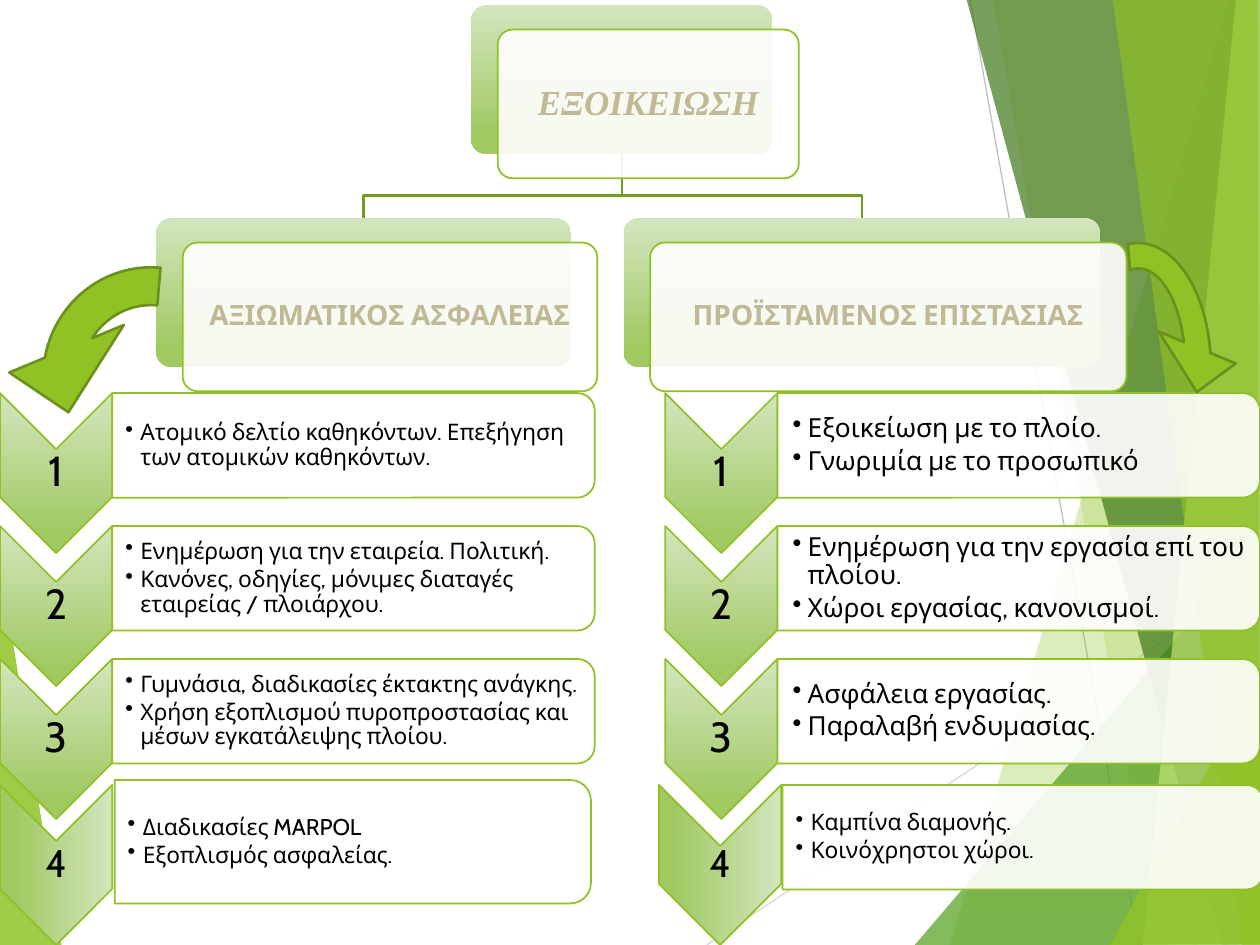
from dataclasses import dataclass

from lxml import etree
from pptx import Presentation
from pptx.dml.color import RGBColor
from pptx.enum.shapes import MSO_CONNECTOR, MSO_SHAPE
from pptx.enum.text import MSO_ANCHOR, MSO_AUTO_SIZE, PP_ALIGN
from pptx.oxml.ns import qn
from pptx.util import Inches, Pt

ROUNDED = MSO_SHAPE.ROUNDED_RECTANGLE
CHEVRON = MSO_SHAPE.CHEVRON
PANEL = MSO_SHAPE.ROUND_2_SAME_RECTANGLE
CURVED_ARROW = MSO_SHAPE.CIRCULAR_ARROW
STRAIGHT = MSO_CONNECTOR.STRAIGHT
MIDDLE = MSO_ANCHOR.MIDDLE
NO_AUTOFIT = MSO_AUTO_SIZE.NONE
CENTER, LEFT = PP_ALIGN.CENTER, PP_ALIGN.LEFT

COLORS = {
    "white": "FFFFFF", "black": "000000", "heading": "C1B995",
    "lime": "90C226", "leaf": "54A021", "forest": "3F7819", "pale": "C0E474",
    "grad_light": "D3E5BE", "grad_dark": "A0C962",
    "branch": "739B1E", "arrow_edge": "6B901C",
    "gray_light": "D9D9D9", "gray": "BFBFBF",
}
BODY_FONT = "Cabin"
TITLE_FONT = "Times New Roman"
ROW_TOP, ROW_PITCH = 3.12, 1.055
CHEVRON_W, CHEVRON_H = 0.89, 1.27
PANEL_W, PANEL_H = 3.83, 0.83
ARROW_ADJUSTMENTS = (0.125, 24.949, 204.577, 159.075, 0.205)


@dataclass(frozen=True)
class Box:
    left: float
    top: float
    width: float
    height: float

    def emu(self):
        return [Inches(v) for v in (self.left, self.top, self.width, self.height)]

    def inset(self, dx, dy):
        return Box(self.left + dx, self.top + dy, self.width - 2 * dx, self.height - 2 * dy)


@dataclass(frozen=True)
class Facet:
    points: tuple
    color: str
    opacity: int


@dataclass(frozen=True)
class Step:
    number: int
    chevron: Box
    panel: Box
    lines: tuple
    size: int
    number_size: int = 24
    gradient_angle: int = 0


FACETS_BEHIND = (Facet(((-0.01, 4.39), (0.49, 7.51), (-0.01, 7.5)), "lime", 85),)
FACETS_RIGHT = (
    Facet(((9.75, 0), (7.54, 7.5), (10.02, 7.51), (10.01, 0.01)), "lime", 30),
    Facet(((7.88, -0.01), (9.19, 7.5), (10.01, 7.5), (10.01, -0.01)), "lime", 20),
    Facet(((7.26, 7.5), (10, 4.29), (10.01, 7.5)), "leaf", 72),
    Facet(((7.67, -0.01), (9.7, 7.5), (10.01, 7.49), (10.01, -0.01)), "forest", 70),
    Facet(((9.81, -0.01), (9.07, 7.5), (10.01, 7.5), (10, -0.01)), "pale", 70),
    Facet(((8.83, -0.01), (9.86, 7.5), (10, 7.5), (9.98, -0.01)), "lime", 65),
    Facet(((8.81, 7.5), (10.01, 5.35), (10.01, 7.49)), "lime", 80),
)
THIN_LINES = (((5.61, 7.5), (10.01, 4.57), "gray_light"), ((7.7, 0), (9.04, 7.5), "gray"))

ROOT_CARD = Box(3.74, 0.04, 2.39, 1.18)
BRANCHES = (
    (Box(1.24, 1.73, 3.29, 1.18), "ΑΞΙΩΜΑΤΙΚΟΣ ΑΣΦΑΛΕΙΑΣ"),
    (Box(4.95, 1.73, 3.78, 1.18), "ΠΡΟΪΣΤΑΜΕΝΟΣ ΕΠΙΣΤΑΣΙΑΣ"),
)

OFFICER_DUTIES = (
    ("Ατομικό δελτίο καθηκόντων. Επεξήγηση των ατομικών καθηκόντων.",),
    ("Ενημέρωση για την εταιρεία. Πολιτική.",
     "Κανόνες, οδηγίες, μόνιμες διαταγές εταιρείας / πλοιάρχου."),
    ("Γυμνάσια, διαδικασίες έκτακτης ανάγκης.",
     "Χρήση εξοπλισμού πυροπροστασίας και μέσων εγκατάλειψης πλοίου."),
)
SUPERVISOR_DUTIES = (
    ("Εξοικείωση με το πλοίο.", "Γνωριμία με το προσωπικό"),
    ("Ενημέρωση για την εργασία επί του πλοίου.", "Χώροι εργασίας, κανονισμοί."),
    ("Ασφάλεια εργασίας.", "Παραλαβή ενδυμασίας."),
)
LAST_STEPS = (
    Step(4, Box(0, 6.23, CHEVRON_W, CHEVRON_H), Box(0.91, 6.19, 3.78, 0.98),
         ("Διαδικασίες MARPOL", "Εξοπλισμός ασφαλείας."), 13, 22, 270),
    Step(4, Box(5.23, 6.23, 0.97, CHEVRON_H), Box(6.21, 6.23, 3.82, PANEL_H),
         ("Καμπίνα διαμονής.", "Κοινόχρηστοι χώροι."), 13, 22, 270),
)


def rgb(name: str) -> RGBColor:
    return RGBColor.from_string(COLORS[name])


def fill_solid(shape, color: str, opacity: int = 100) -> None:
    shape.shadow.inherit = False
    shape.fill.solid()
    shape.fill.fore_color.rgb = rgb(color)
    if opacity < 100:
        tint = shape._element.spPr.find(qn("a:solidFill")).find(qn("a:srgbClr"))
        etree.SubElement(tint, qn("a:alpha"), val=str(opacity * 1000))


def fill_gradient(shape, angle: int) -> None:
    """Light-to-dark green; the angle runs counter-clockwise."""
    shape.shadow.inherit = False
    shape.fill.gradient()
    shape.fill.gradient_angle = angle
    stops = zip(shape.fill.gradient_stops, ("grad_light", "grad_dark"), (0, 0.88))
    for stop, color, position in stops:
        stop.color.rgb = rgb(color)
        stop.position = position


def outline(shape, color: str = "lime", width: float = 1) -> None:
    shape.line.color.rgb = rgb(color)
    shape.line.width = Pt(width)


def polygon(shapes, points: tuple, close: bool = True):
    start, *rest = [(Inches(x), Inches(y)) for x, y in points]
    builder = shapes.build_freeform(*start)
    builder.add_line_segments(rest, close=close)
    return builder.convert_to_shape()


def draw_facets(shapes, facets: tuple) -> None:
    for facet in facets:
        shape = polygon(shapes, facet.points)
        fill_solid(shape, facet.color, facet.opacity)
        shape.line.fill.background()


def draw_thin_line(shapes, start: tuple, end: tuple, color: str) -> None:
    line = shapes.add_connector(STRAIGHT, *(Inches(v) for v in start + end))
    outline(line, color, 0.75)
    etree.SubElement(line._element.spPr, qn("a:effectLst"))


def write(shape, lines: tuple, size: int, color: str = "black", margin: float = 0.02,
          font: str = BODY_FONT, bold: bool = False, italic: bool = False,
          bulleted: bool = False) -> None:
    frame = shape.text_frame
    frame.text = "\n".join(lines)
    frame.word_wrap = True
    frame.auto_size = NO_AUTOFIT
    frame.vertical_anchor = MIDDLE
    frame.margin_top = frame.margin_right = frame.margin_bottom = Inches(margin)
    frame.margin_left = Inches(size * 0.008 if bulleted else margin)
    for paragraph in frame.paragraphs:
        paragraph.alignment = LEFT if bulleted else CENTER
        paragraph.line_spacing = 0.9
        if bulleted:
            paragraph.level = 1
            paragraph.space_after = Pt(size * 0.15)
            props = paragraph._p.get_or_add_pPr()
            props.set("marL", str(Inches(0.12)))
            props.set("indent", str(-Inches(0.12)))
            etree.SubElement(props, qn("a:buChar"), char="•")
        for run in paragraph.runs:
            run.font.name, run.font.size = font, Pt(size)
            run.font.bold, run.font.italic = bold, italic
            run.font.color.rgb = rgb(color)


def draw_card(shapes, back: Box) -> Box:
    """Draw a gradient card with a white card in front; return the text area."""
    front = Box(back.left + 0.21, back.top + 0.195, back.width, back.height)
    rear_card, front_card = (shapes.add_shape(ROUNDED, *box.emu()) for box in (back, front))
    for card in (rear_card, front_card):
        card.adjustments[0] = 0.1
    fill_gradient(rear_card, 270)
    rear_card.line.fill.background()
    fill_solid(front_card, "white", 90)
    outline(front_card)
    return front.inset(0.035, 0.035)


def draw_branch(shapes, child: Box) -> None:
    start_x = ROOT_CARD.left + ROOT_CARD.width / 2
    end_x = child.left + child.width / 2
    branch = polygon(shapes, ((start_x, ROOT_CARD.top + ROOT_CARD.height), (start_x, 1.55),
                              (end_x, 1.55), (end_x, child.top)), close=False)
    branch.shadow.inherit = False
    branch.fill.background()
    outline(branch, "branch", 1.5)


def add_turned(shapes, kind, box: Box):
    """Add a shape turned 90 degrees so that it covers the box."""
    shift = (box.width - box.height) / 2
    unturned = Box(box.left + shift, box.top - shift, box.height, box.width)
    shape = shapes.add_shape(kind, *unturned.emu())
    shape.rotation = 90
    outline(shape)
    return shape


def draw_step(shapes, step: Step) -> None:
    fill_gradient(add_turned(shapes, CHEVRON, step.chevron), step.gradient_angle)
    number = shapes.add_textbox(*step.chevron.inset(0, 0.445).emu())
    write(number, (str(step.number),), step.number_size)
    fill_solid(add_turned(shapes, PANEL, step.panel), "white", 90)
    area = Box(step.panel.left, step.panel.top + 0.04, step.panel.width - 0.04, step.panel.height - 0.08)
    write(shapes.add_textbox(*area.emu()), step.lines, step.size, margin=0.01, bulleted=True)


def draw_column(shapes, left: float, duties: tuple, size: int, last: Step) -> None:
    for row, lines in enumerate(duties):
        top = ROW_TOP + row * ROW_PITCH
        draw_step(shapes, Step(row + 1, Box(left, top, CHEVRON_W, CHEVRON_H),
                               Box(left + CHEVRON_W, top, PANEL_W, PANEL_H), lines, size))
    draw_step(shapes, last)


def draw_curved_arrow(shapes, box: Box, mirrored: bool = False) -> None:
    arrow = shapes.add_shape(CURVED_ARROW, *box.emu())
    for index, value in enumerate(ARROW_ADJUSTMENTS):
        arrow.adjustments[index] = value
    fill_solid(arrow, "lime")
    outline(arrow, "arrow_edge", 1.5)
    if mirrored:
        arrow._element.spPr.find(qn("a:xfrm")).set("flipH", "1")


def main() -> None:
    deck = Presentation()
    deck.slide_width, deck.slide_height = Inches(10), Inches(7.5)
    slide = deck.slides.add_slide(deck.slide_layouts[5])
    shapes, title = slide.shapes, slide.shapes.title

    draw_facets(shapes, FACETS_BEHIND)
    for start, end, color in THIN_LINES:
        draw_thin_line(shapes, start, end, color)
    draw_facets(shapes, FACETS_RIGHT)

    for card, _ in BRANCHES:
        draw_branch(shapes, card)
    title_area = draw_card(shapes, ROOT_CARD)
    title.left, title.top, title.width, title.height = title_area.emu()
    write(title, ("ΕΞΟΙΚΕΙΩΣΗ",), 20, "heading", 0.08, TITLE_FONT, bold=True, italic=True)
    shapes._spTree.append(title._element)  # bring the title in front of its card
    for card, role in BRANCHES:
        role_area = draw_card(shapes, card)
        write(shapes.add_textbox(*role_area.emu()), (role,), 16, "heading", 0.07, bold=True)

    draw_column(shapes, 0, OFFICER_DUTIES, 13, LAST_STEPS[0])
    draw_column(shapes, 5.28, SUPERVISOR_DUTIES, 15, LAST_STEPS[1])
    draw_curved_arrow(shapes, Box(0, 1.78, 2.4, 2.44), mirrored=True)
    draw_curved_arrow(shapes, Box(8.23, 1.7, 1.61, 2.44))
    deck.save("out.pptx")


if __name__ == "__main__":
    main()
